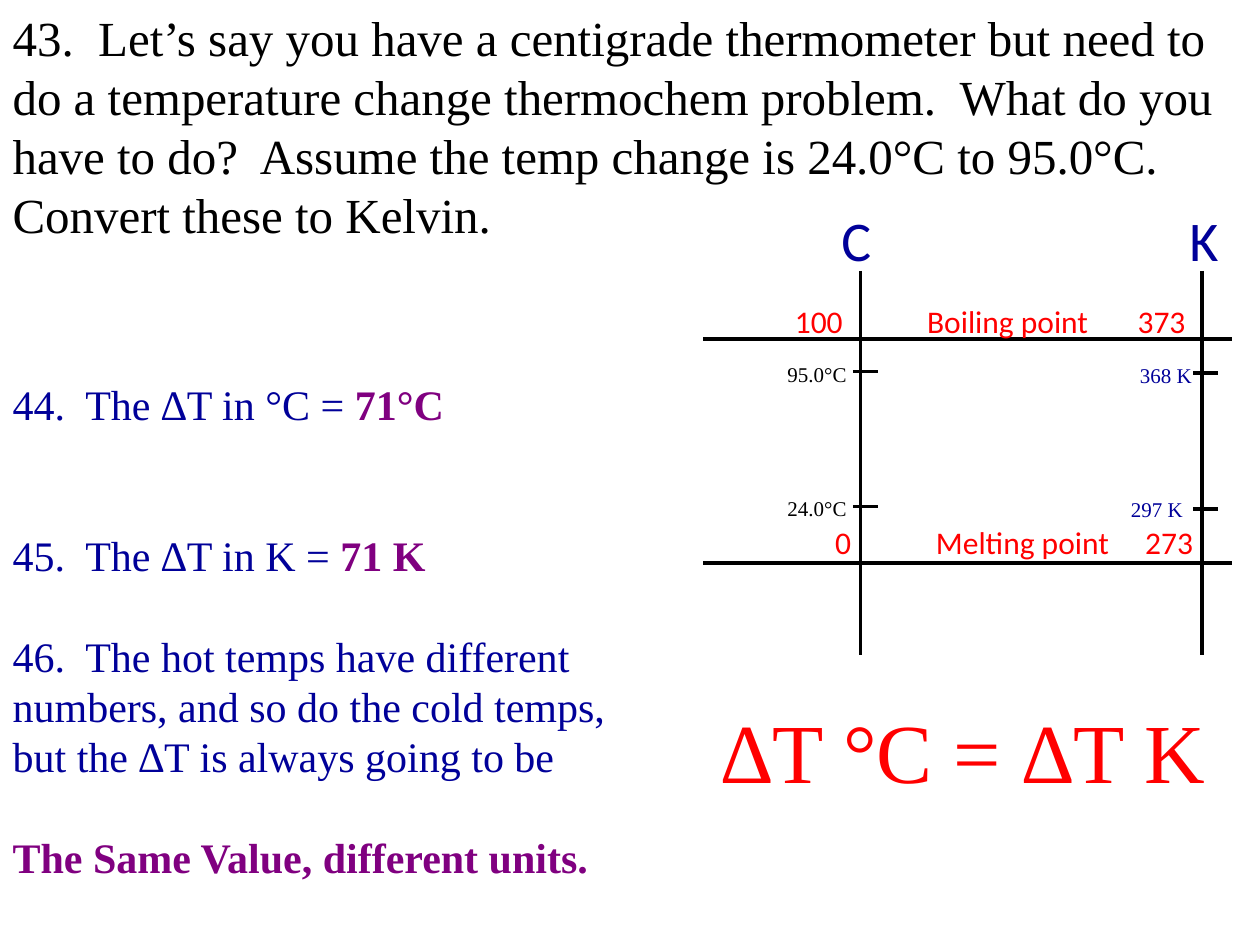
from lxml import etree
from pptx import Presentation
from pptx.dml.color import RGBColor
from pptx.enum.shapes import MSO_CONNECTOR
from pptx.enum.text import MSO_ANCHOR, MSO_AUTO_SIZE, PP_ALIGN
from pptx.oxml.ns import qn
from pptx.util import Inches, Pt

STRAIGHT = MSO_CONNECTOR.STRAIGHT
TOP, NO_FIT = MSO_ANCHOR.TOP, MSO_AUTO_SIZE.NONE
LEFT, MID, RIGHT = PP_ALIGN.LEFT, PP_ALIGN.CENTER, PP_ALIGN.RIGHT

INK = {"black": "000000", "navy": "000099", "plum": "800080", "red": "FF0000"}
SERIF, SANS = "Times New Roman", "Calibri"

ASK = ("43.  Let’s say you have a centigrade thermometer but need to do a "
       "temperature change thermochem problem.  What do you have to do?  "
       "Assume the temp change is 24.0°C to 95.0°C.  Convert these to Kelvin.")

# space before in points, then plain text and bold answer
NOTES = [
    (0, "44.  The ∆T in °C = ", "71°C"),
    (57.6, "45.  The ∆T in K = ", "71 K"),
    (28.8, "46.  The hot temps have different numbers, and so do the cold "
           "temps, but the ∆T is always going to be", ""),
    (28.8, "", "The Same Value, different units."),
]

# text, left, top, width, height, size, font, colour, alignment, inset
LABELS = [
    ("C", 6.58, 1.58, 0.58, 0.64, 32, SANS, "navy", LEFT, 0.1),
    ("K", 9.34, 1.58, 0.58, 0.64, 32, SANS, "navy", LEFT, 0.1),
    ("95.0°C", 6.21, 2.83, 0.56, 0.28, 12, SERIF, "black", LEFT, 0.04),
    ("24.0°C", 6.21, 3.89, 0.56, 0.28, 12, SERIF, "black", LEFT, 0.04),
    ("368 K", 8.94, 2.84, 0.56, 0.28, 12, SERIF, "navy", RIGHT, 0.04),
    ("297 K ", 8.91, 3.9, 0.56, 0.28, 12, SERIF, "navy", RIGHT, 0.04),
    ("∆T °C = ∆T K ", 5.5, 5.5, 4.46, 0.91, 48, SERIF, "red", MID, 0.1),
]

# text, left, top, tab stops
POINTS = [
    ("100\tBoiling point\t373", 6.21, 2.35, (1.05, 2.72)),
    ("\t0\tMelting point\t273", 6.25, 4.1, (0.28, 1.08, 2.74)),
]

AXES = (6.83, 9.54)
LEVELS = (2.69, 4.47)
TICKS = [(6.77, 2.95), (6.77, 4.02), (9.47, 2.96), (9.47, 4.04)]


def place(shape, left, top, width, height):
    shape.left, shape.top = Inches(left), Inches(top)
    shape.width, shape.height = Inches(width), Inches(height)


def setup(frame, inset=0.1):
    frame.word_wrap = True
    frame.auto_size = NO_FIT
    frame.vertical_anchor = TOP
    frame.margin_left = frame.margin_right = Inches(inset)
    frame.margin_top = frame.margin_bottom = Inches(min(inset, 0.05))


def add_run(para, text, size, font, ink, bold=False):
    run = para.add_run()
    run.text = text
    run.font.size, run.font.name, run.font.bold = Pt(size), font, bold
    run.font.color.rgb = RGBColor.from_string(INK[ink])


def add_label(slide, text, left, top, width, height, size, font, ink, align, inset):
    box = slide.shapes.add_textbox(0, 0, 0, 0)
    place(box, left, top, width, height)
    setup(box.text_frame, inset)
    para = box.text_frame.paragraphs[0]
    para.alignment = align
    add_run(para, text, size, font, ink)
    return para


def set_tabs(para, stops):
    tabs = etree.SubElement(para._p.get_or_add_pPr(), qn("a:tabLst"))
    for stop in stops:
        etree.SubElement(tabs, qn("a:tab"), pos=str(Inches(stop)), algn="l")


def clear_bullet(para):
    props = para._p.get_or_add_pPr()
    props.set("marL", "0")
    props.set("indent", "0")
    etree.SubElement(props, qn("a:buNone"))


def add_line(slide, x1, y1, x2, y2):
    line = slide.shapes.add_connector(STRAIGHT, *map(Inches, (x1, y1, x2, y2)))
    line.line.width = Pt(2)
    line.line.color.rgb = RGBColor.from_string(INK["black"])
    etree.SubElement(line._element.spPr, qn("a:effectLst"))


def main():
    deck = Presentation()
    deck.slide_width, deck.slide_height = Inches(10), Inches(7.5)
    slide = deck.slides.add_slide(deck.slide_layouts[1])
    title, body = slide.shapes.title, slide.placeholders[1]

    place(title, 0, 0.01, 10, 2.29)
    setup(title.text_frame)
    para = title.text_frame.paragraphs[0]
    para.alignment = LEFT
    add_run(para, ASK, 28, SERIF, "black")

    place(body, 0, 2.95, 5, 4.14)
    setup(body.text_frame)
    for i, (gap, text, answer) in enumerate(NOTES):
        frame = body.text_frame
        para = frame.add_paragraph() if i else frame.paragraphs[0]
        para.space_before = Pt(gap)
        clear_bullet(para)
        if text:
            add_run(para, text, 24, SERIF, "navy")
        if answer:
            add_run(para, answer, 24, SERIF, "plum", True)

    for x in AXES:
        add_line(slide, x, 2.15, x, 5.2)
    for y in LEVELS:
        add_line(slide, 5.58, y, 9.78, y)
    for x, y in TICKS:
        add_line(slide, x, y, x + 0.2, y)

    for label in LABELS:
        add_label(slide, *label)
    for text, left, top, stops in POINTS:
        para = add_label(slide, text, left, top, 3.71, 0.4, 18, SANS, "red", LEFT, 0.1)
        set_tabs(para, stops)

    deck.save("out.pptx")


if __name__ == "__main__":
    main()
